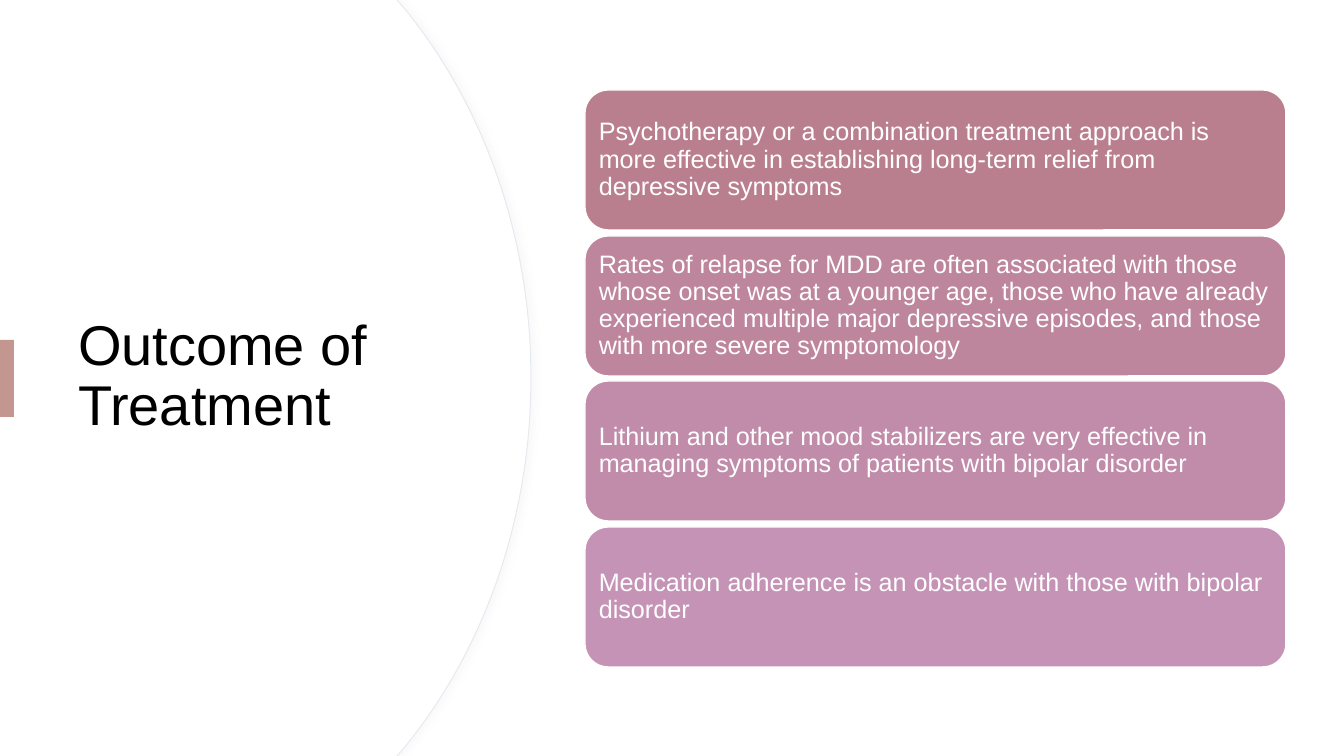
"""Build the Outcome of Treatment slide: a curved title panel and four findings."""
import lxml.etree
import pptx
import pptx.dml.color
import pptx.enum.shapes
import pptx.enum.text
import pptx.oxml
import pptx.oxml.ns
import pptx.util

PX = 9071.43
THEME = {
    "font": "Arial",
    "title_size": 40,
    "body_size": 18,
    "title": "000000",
    "white": "FFFFFF",
    "edge": "E5EAF0",
    "shadow": "D9D9D9",
    "accent": "C39790",
}
FINDINGS = [
    ("BA7F8F", "Psychotherapy or a combination treatment approach is more effective "
     "in establishing long-term relief from depressive symptoms"),
    ("BE869D", "Rates of relapse for MDD are often associated with those whose onset was "
     "at a younger age, those who have already experienced multiple major depressive "
     "episodes, and those with more severe symptomology"),
    ("C18CAA", "Lithium and other mood stabilizers are very effective in managing "
     "symptoms of patients with bipolar disorder"),
    ("C593B6", "Medication adherence is an obstacle with those with bipolar disorder"),
]


def paint(shape, fill, line=None, width=1):
    """Give a shape a flat fill and an optional outline."""
    shape.shadow.inherit = False
    shape.fill.solid()
    shape.fill.fore_color.rgb = pptx.dml.color.RGBColor.from_string(fill)
    if line is None:
        shape.line.fill.background()
    else:
        shape.line.color.rgb = pptx.dml.color.RGBColor.from_string(line)
        shape.line.width = pptx.util.Pt(width)


def write(shape, text, size, color):
    """Set left-aligned, vertically centred text."""
    frame = shape.text_frame
    frame.text = text
    frame.word_wrap = True
    frame.auto_size = pptx.enum.text.MSO_AUTO_SIZE.NONE
    frame.vertical_anchor = pptx.enum.text.MSO_ANCHOR.MIDDLE
    para = frame.paragraphs[0]
    para.alignment = pptx.enum.text.PP_ALIGN.LEFT
    para.line_spacing = 0.9
    span = para.runs[0]
    span.font.name = THEME["font"]
    span.font.size = pptx.util.Pt(size)
    span.font.color.rgb = pptx.dml.color.RGBColor.from_string(color)


deck = pptx.Presentation()
deck.slide_width = round(1344 * PX)
deck.slide_height = round(756 * PX)
page = deck.slides.add_slide(deck.slide_layouts[5])

backdrop = page.shapes.add_shape(pptx.enum.shapes.MSO_SHAPE.RECTANGLE,
                                 0, 0, deck.slide_width, deck.slide_height)
paint(backdrop, THEME["white"])

corners = [(397, 0), (404, 8), (531, 378), (404, 748), (397, 756), (0, 756)]
bends = {2: ((482, 103), (531, 234)), 3: ((531, 522), (482, 653))}
for inset, edge in ((0, THEME["edge"]), (1, None)):
    builder = page.shapes.build_freeform(0, 0, scale=PX)
    builder.add_line_segments([(max(x - inset, 0), y) for x, y in corners], close=True)
    panel = builder.convert_to_shape()
    paint(panel, THEME["white"], edge, 0.75)
    segments = list(panel.element.iter(pptx.oxml.ns.qn("a:lnTo")))
    for index, handles in bends.items():
        curve = lxml.etree.Element(pptx.oxml.ns.qn("a:cubicBezTo"))
        for x, y in handles:
            lxml.etree.SubElement(curve, pptx.oxml.ns.qn("a:pt"),
                                  x=str(x - inset), y=str(y))
        curve.append(segments[index][0])
        segments[index].getparent().replace(segments[index], curve)
    if edge:
        effects = panel.element.spPr.find(pptx.oxml.ns.qn("a:effectLst"))
        shadow = lxml.etree.SubElement(effects, pptx.oxml.ns.qn("a:outerShdw"),
                                       blurRad="50800", dist="38100", dir="0")
        tint = lxml.etree.SubElement(shadow, pptx.oxml.ns.qn("a:srgbClr"),
                                     val=THEME["shadow"])
        lxml.etree.SubElement(tint, pptx.oxml.ns.qn("a:alpha"), val="15000")

title = page.shapes.title
title.left, title.top, title.width, title.height = (
    round(length * PX) for length in (68, 128, 397, 499))
write(title, "Outcome of Treatment", THEME["title_size"], THEME["title"])
page.shapes.element.append(title.element)

accent = page.shapes.add_shape(pptx.enum.shapes.MSO_SHAPE.RECTANGLE,
                               0, round(340 * PX), round(14 * PX), round(77 * PX))
paint(accent, THEME["accent"])

for index, (color, text) in enumerate(FINDINGS):
    top = 90 + (1 + index * 291) // 2
    box = page.shapes.add_shape(pptx.enum.shapes.MSO_SHAPE.ROUNDED_RECTANGLE,
                                round(585 * PX), round(top * PX),
                                round(701 * PX), round(140 * PX))
    paint(box, color, THEME["white"])
    write(box, text, THEME["body_size"], THEME["white"])
    frame = box.text_frame
    frame.margin_left = frame.margin_right = round(7 * PX)
    frame.margin_top = frame.margin_bottom = round(7 * PX)

deck.save("out.pptx")
